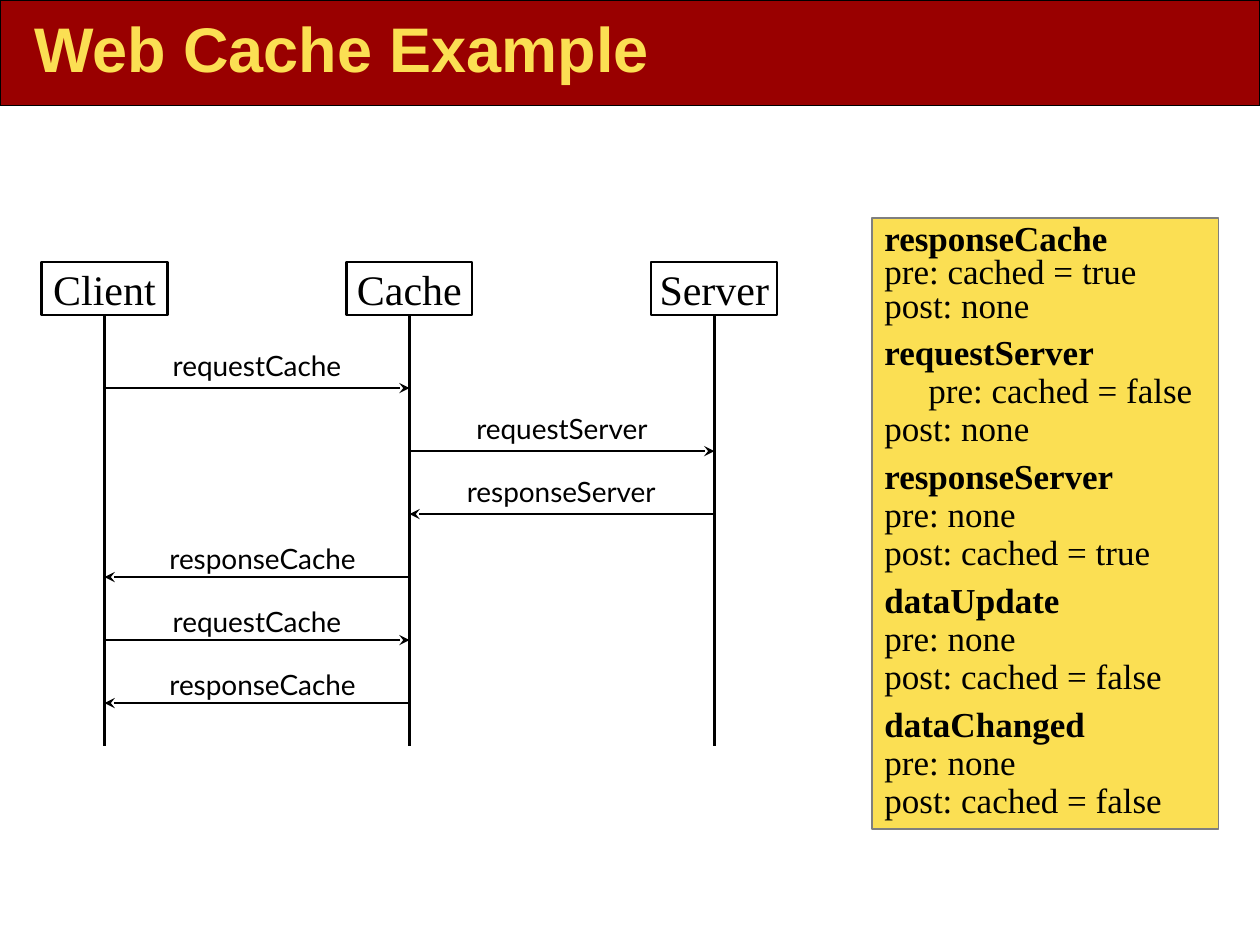
from pptx import Presentation
from pptx.dml.color import RGBColor
from pptx.enum.shapes import MSO_CONNECTOR, MSO_SHAPE
from pptx.enum.text import MSO_ANCHOR, PP_ALIGN
from pptx.oxml.ns import qn
from pptx.util import Inches, Pt
from lxml.etree import SubElement

COLORS = {"red": "990000", "yellow": "FBDF53", "black": "000000",
          "white": "FFFFFF", "gray": "7F7F7F"}
SERIF = "Times New Roman"
LIFELINES = {"Client": 0.83, "Cache": 3.25, "Server": 5.67}
LABEL_SPANS = {"requestCache": (1.25, 1.58), "requestServer": (3.67, 1.58),
               "responseServer": (3.58, 1.75), "responseCache": (1.17, 1.83)}
MESSAGES = [("requestCache", "Client", "Cache", 0.36),
            ("requestServer", "Cache", "Server", 0.36),
            ("responseServer", "Server", "Cache", 0.36),
            ("responseCache", "Cache", "Client", 0.33),
            ("requestCache", "Client", "Cache", 0.33),
            ("responseCache", "Cache", "Client", 0.33)]
CONDITIONS = [("responseCache", "true", "none", 0.8, 0),
              ("requestServer", "false", "none", 0.9, 0.35),
              ("responseServer", "none", "true", 0.9, 0),
              ("dataUpdate", "none", "false", 0.9, 0),
              ("dataChanged", "none", "false", 0.9, 0)]


def rgb(name):
    """Return the named colour."""
    return RGBColor.from_string(COLORS[name])


def write(p, text, size=20, font=SERIF, color="black", bold=False,
          align=PP_ALIGN.LEFT, spacing=None, after=0):
    """Put formatted text in a paragraph."""
    p.alignment = align
    p.line_spacing = spacing
    p.space_before, p.space_after = Pt(0), Pt(after)
    r = p.add_run()
    r.text = text
    r.font.size, r.font.name, r.font.bold = Pt(size), font, bold
    r.font.color.rgb = rgb(color)


def add_box(s, left, top, width, height, fill, line="black", weight=0.75):
    """Add a filled, outlined rectangle."""
    sp = s.shapes.add_shape(MSO_SHAPE.RECTANGLE, Inches(left), Inches(top),
                            Inches(width), Inches(height))
    sp.shadow.inherit = False
    sp.fill.solid()
    sp.fill.fore_color.rgb = rgb(fill)
    sp.line.color.rgb = rgb(line)
    sp.line.width = Pt(weight)
    return sp


def add_line(s, x1, y1, x2, y2, weight, arrow=False):
    """Add a straight line, with an arrowhead at its end if asked."""
    cn = s.shapes.add_connector(MSO_CONNECTOR.STRAIGHT, Inches(x1), Inches(y1),
                                Inches(x2), Inches(y2))
    cn.line.color.rgb = rgb("black")
    cn.line.width = Pt(weight)
    if arrow:
        SubElement(cn.line._get_or_add_ln(), qn("a:tailEnd"), type="stealth")
    SubElement(cn._element.spPr, qn("a:effectLst"))


def add_title(s, text):
    """Format the title and set a bar behind it."""
    title = s.shapes.title
    title.left, title.top = Inches(0.17), Inches(-0.04)
    title.width, title.height = Inches(7.5), Inches(0.83)
    tf = title.text_frame
    tf.vertical_anchor = MSO_ANCHOR.MIDDLE
    write(tf.paragraphs[0], text, size=36, font="Arial", color="yellow", bold=True)
    bar = add_box(s, 0, 0, 10, 0.84, "red")
    title._element.addprevious(bar._element)


def add_conditions(s):
    """Add the panel of pre- and postconditions."""
    tf = add_box(s, 6.92, 1.73, 2.75, 4.85, "yellow", "gray").text_frame
    tf.word_wrap = True
    tf.vertical_anchor = MSO_ANCHOR.TOP
    p = tf.paragraphs[0]
    for i, (name, pre, post, spacing, indent) in enumerate(CONDITIONS):
        if i:
            p = tf.add_paragraph()
        write(p, name, bold=True, spacing=spacing)
        for key, value, left, after in (("pre", pre, indent, 0), ("post", post, 0, 6)):
            p = tf.add_paragraph()
            if left:
                p._p.get_or_add_pPr().set("marL", str(Inches(left)))
            state = value if value == "none" else f"cached = {value}"
            write(p, f"{key}: {state}", spacing=spacing, after=after)


def add_participant(s, name, x):
    """Add a participant box with its lifeline."""
    tf = add_box(s, x - 0.5, 2.08, 1, 0.42, "white", weight=1.25).text_frame
    tf.word_wrap = False
    tf.vertical_anchor = MSO_ANCHOR.MIDDLE
    write(tf.paragraphs[0], name, size=24, align=PP_ALIGN.CENTER)
    add_line(s, x, 2.5, x, 5.92, 1.5)


def add_message(s, name, sender, receiver, y, rise):
    """Add a message arrow with its label above."""
    add_line(s, LIFELINES[sender], y, LIFELINES[receiver], y, 1.25, arrow=True)
    left, width = LABEL_SPANS[name]
    tf = s.shapes.add_textbox(Inches(left), Inches(y - rise),
                              Inches(width), Inches(0.37)).text_frame
    tf.word_wrap = True
    write(tf.paragraphs[0], name, size=16, font="Lato", align=PP_ALIGN.CENTER)


def main():
    """Build the slide and save it."""
    prs = Presentation()
    prs.slide_width, prs.slide_height = Inches(10), Inches(7.5)
    s = prs.slides.add_slide(prs.slide_layouts[5])
    add_title(s, "Web Cache Example")
    add_conditions(s)
    for name, x in LIFELINES.items():
        add_participant(s, name, x)
    for i, (name, sender, receiver, rise) in enumerate(MESSAGES):
        add_message(s, name, sender, receiver, 3.08 + 0.5 * i, rise)
    prs.save("out.pptx")


if __name__ == "__main__":
    main()
